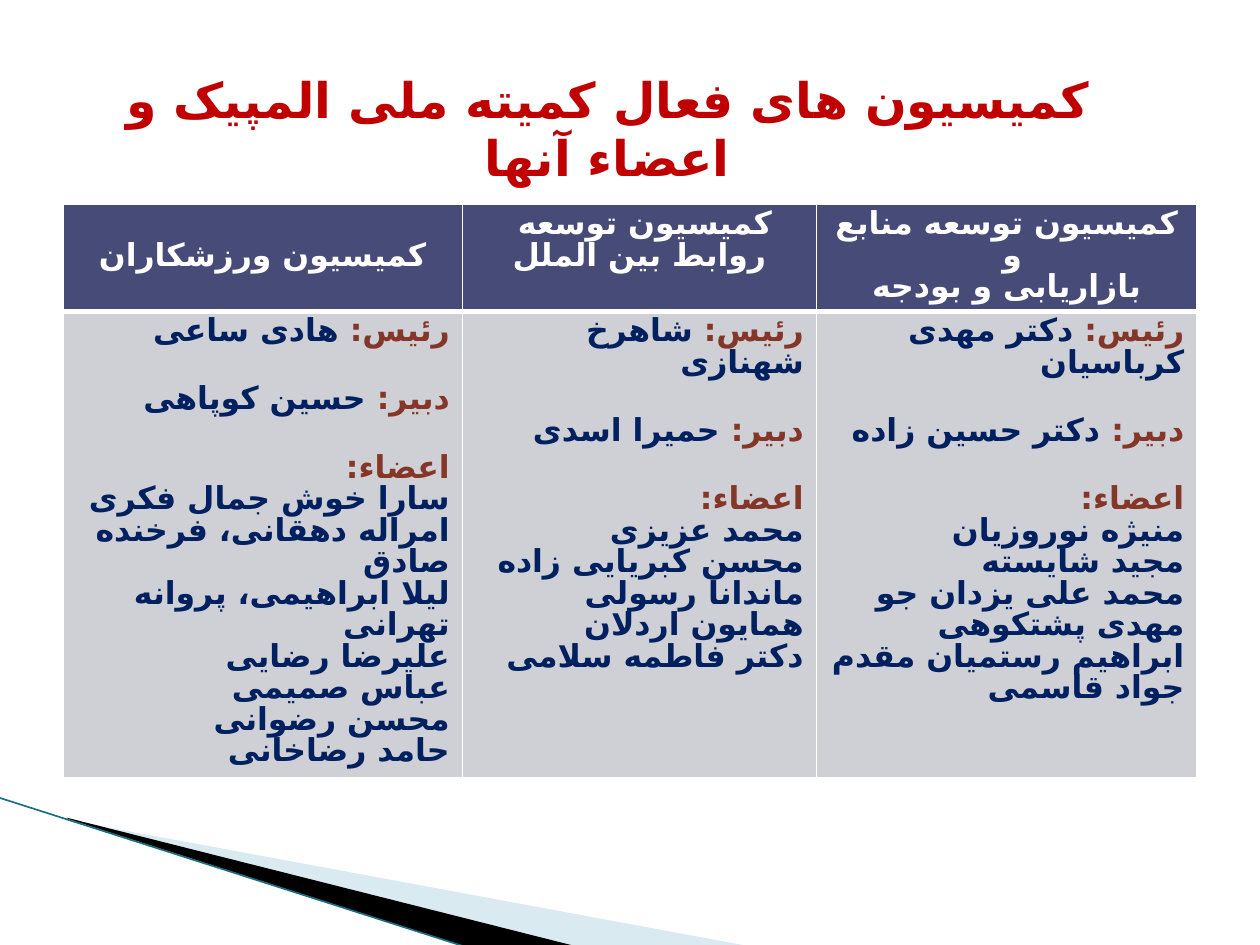
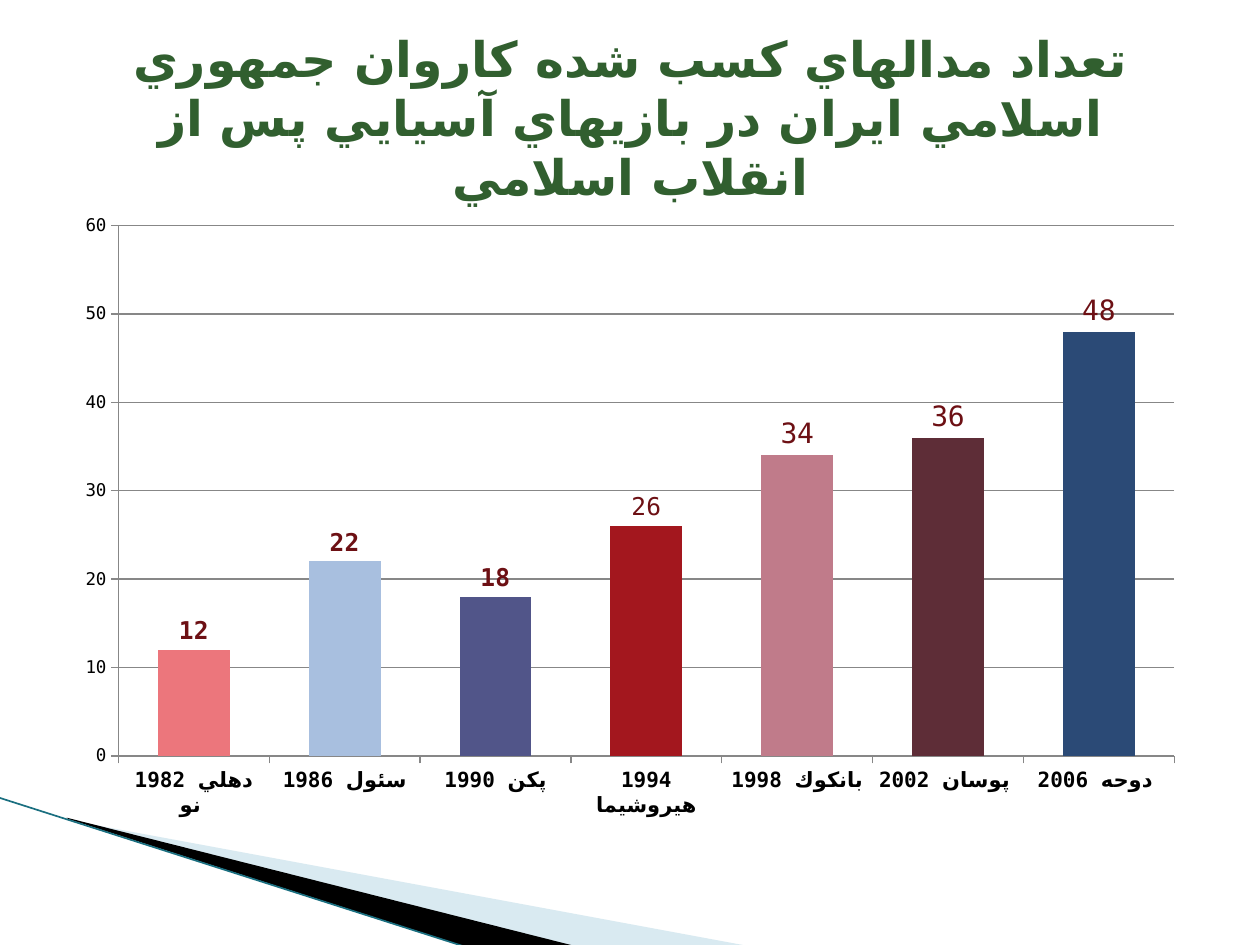
import dataclasses

import lxml.etree
import pptx
import pptx.chart.data
import pptx.dml.color
import pptx.enum.chart
import pptx.enum.shapes
import pptx.enum.text
import pptx.oxml
import pptx.oxml.ns
import pptx.util

SCALE = 9144
qn = pptx.oxml.ns.qn
ALIGN = pptx.enum.text.PP_ALIGN
ANCHOR = pptx.enum.text.MSO_ANCHOR


@dataclasses.dataclass(frozen=True)
class Theme:
    font: str = "DejaVu Sans Mono"
    persian_font: str = "DejaVu Sans"
    white: str = "FFFFFF"
    black: str = "000000"
    red_title: str = "C00000"
    green_title: str = "315F2F"
    header_fill: str = "474B78"
    body_fill: str = "CFD0D6"
    role: str = "843728"
    member: str = "002060"
    wedge: str = "A0CBDC"
    edge: str = "1A6F80"
    grid: str = "878787"
    value_label: str = "6D1014"
    title_size: int = 28
    table_size: int = 18
    category_size: int = 12
    axis_size: int = 10
    section_gap: int = 21
    bars: tuple = ("EC767C", "A8BFDF", "515589", "A3171E", "C07B8A", "5E2D37", "2B4A76")


def px(length):
    return pptx.util.Emu(length * SCALE)


def rgb(color):
    return pptx.dml.color.RGBColor.from_string(color)


def child(parent, tag, **attributes):
    element = lxml.etree.SubElement(parent, qn(tag))
    for name, value in attributes.items():
        element.set(name, str(value))
    return element


def style_font(font, theme, size, color, bold=False):
    font.name = theme.font
    font.size = pptx.util.Pt(size)
    font.bold = bold
    font.color.rgb = rgb(color)
    child(font._rPr, "a:cs", typeface=theme.persian_font)


def write(para, text, align=None, spacing=None, before=None, **style):
    if align is not None:
        para.alignment = align
        para._p.get_or_add_pPr().set("rtl", "1")
    if spacing:
        para.line_spacing = pptx.util.Pt(spacing)
    if before:
        para.space_before = pptx.util.Pt(before)
    span = para.add_run()
    span.text = text
    style_font(span.font, **style)


class Page:
    def __init__(self, deck, theme):
        self.deck = deck
        self.theme = theme
        self.slide = None

    def start(self):
        self.slide = self.deck.slides.add_slide(self.deck.slide_layouts[6])
        self.polygon([(55, 651), (595, 751), (456, 751), (55, 650)], self.theme.wedge, alpha=40)
        self.polygon([(53, 649), (457, 751), (372, 752), (54, 650)], self.theme.black)
        self.line((-1, 633), (371, 752), self.theme.edge, 0.95)

    def polygon(self, points, color, alpha=None):
        builder = self.slide.shapes.build_freeform(*points[0], scale=SCALE)
        builder.add_line_segments(points[1:], close=True)
        shape = builder.convert_to_shape()
        shape.shadow.inherit = False
        shape.line.fill.background()
        shape.fill.solid()
        shape.fill.fore_color.rgb = rgb(color)
        if alpha:
            swatch = shape._element.spPr.find(".//" + qn("a:srgbClr"))
            child(swatch, "a:alpha", val=alpha * 1000)

    def line(self, start, end, color, width):
        connector = self.slide.shapes.add_connector(
            pptx.enum.shapes.MSO_CONNECTOR.STRAIGHT, *map(px, start + end))
        connector.line.color.rgb = rgb(color)
        connector.line.width = pptx.util.Pt(width)
        child(connector._element.spPr, "a:effectLst")

    def title(self, text, area, color):
        box = self.slide.shapes.add_textbox(*map(px, area))
        frame = box.text_frame
        frame.word_wrap = True
        frame.vertical_anchor = ANCHOR.MIDDLE
        write(frame.paragraphs[0], text, align=ALIGN.CENTER, theme=self.theme,
              size=self.theme.title_size, color=color, bold=True)

    def paint_cell(self, cell, color, top, bottom):
        properties = cell._tc.get_or_add_tcPr()
        for side, width in (("L", 1), ("R", 1), ("T", top), ("B", bottom)):
            border = child(properties, "a:ln" + side, w=pptx.util.Pt(width))
            child(child(border, "a:solidFill"), "a:srgbClr", val=self.theme.white)
        cell.fill.solid()
        cell.fill.fore_color.rgb = rgb(color)

    def fill_cell(self, cell, lines, align):
        for index, (spans, before) in enumerate(lines):
            para = cell.text_frame.paragraphs[0] if index == 0 else cell.text_frame.add_paragraph()
            for text, color in spans:
                write(para, text, align=align, spacing=self.theme.table_size, before=before,
                      theme=self.theme, size=self.theme.table_size, color=color, bold=True)

    def commission_table(self, commissions, area, widths, heights):
        theme = self.theme
        table = self.slide.shapes.add_table(2, len(commissions), *map(px, area)).table
        for row, height in zip(table.rows, heights):
            row.height = px(height)
        for index, (heading, chair, secretary, members) in enumerate(commissions):
            table.columns[index].width = px(widths[index])
            header, body = table.cell(0, index), table.cell(1, index)
            self.paint_cell(header, theme.header_fill, 1, 3)
            self.paint_cell(body, theme.body_fill, 3, 1)
            if len(heading) == 1:
                header.vertical_anchor = ANCHOR.MIDDLE
            self.fill_cell(header, [([(text, theme.white)], None) for text in heading], ALIGN.CENTER)
            lines = [
                ([("رئیس: ", theme.role), (chair, theme.member)], None),
                ([("دبیر: ", theme.role), (secretary, theme.member)], theme.section_gap),
                ([("اعضاء: ", theme.role)], theme.section_gap),
            ]
            lines += [([(member, theme.member)], None) for member in members]
            self.fill_cell(body, lines, ALIGN.RIGHT)

    def column_chart(self, medals, label_styles, area, plot_box):
        theme = self.theme
        data = pptx.chart.data.CategoryChartData()
        data.categories = [games for games, count in medals]
        data.add_series("Series 1", [count for games, count in medals])
        chart = self.slide.shapes.add_chart(
            pptx.enum.chart.XL_CHART_TYPE.COLUMN_CLUSTERED, *map(px, area), data).chart
        chart.has_legend = False
        chart.has_title = False
        style_font(chart.font, theme, theme.axis_size, theme.black)
        plot = chart.plots[0]
        plot.gap_width = 110
        plot.vary_by_categories = False
        for axis in (chart.category_axis, chart.value_axis):
            axis.major_tick_mark = pptx.enum.chart.XL_TICK_MARK.OUTSIDE
            axis.minor_tick_mark = pptx.enum.chart.XL_TICK_MARK.NONE
            axis.format.line.color.rgb = rgb(theme.grid)
        style_font(chart.category_axis.tick_labels.font, theme,
                   theme.category_size, theme.black, True)
        values = chart.value_axis
        values.minimum_scale, values.maximum_scale, values.major_unit = 0, 60, 10
        values.has_major_gridlines = True
        values.major_gridlines.format.line.color.rgb = rgb(theme.grid)
        for index, (color, (size, bold)) in enumerate(zip(theme.bars, label_styles)):
            point = plot.series[0].points[index]
            point.format.fill.solid()
            point.format.fill.fore_color.rgb = rgb(color)
            style_font(point.data_label.font, theme, size, theme.value_label, bold)
            point.data_label.position = pptx.enum.chart.XL_LABEL_POSITION.OUTSIDE_END
        self.place_plot(chart, area, plot_box)

    def place_plot(self, chart, area, plot_box):
        plot_area = chart._chartSpace.chart.plotArea
        for old in plot_area.findall(qn("c:layout")):
            plot_area.remove(old)
        layout = child(plot_area, "c:layout")
        plot_area.insert(0, layout)
        manual = child(layout, "c:manualLayout")
        child(manual, "c:layoutTarget", val="inner")
        child(manual, "c:xMode", val="edge")
        child(manual, "c:yMode", val="edge")
        left, top, width, height = area
        plot_left, plot_top, plot_width, plot_height = plot_box
        child(manual, "c:x", val=(plot_left - left) / width)
        child(manual, "c:y", val=(plot_top - top) / height)
        child(manual, "c:w", val=plot_width / width)
        child(manual, "c:h", val=plot_height / height)


COMMISSIONS = [
    (["کمیسیون ورزشکاران"], "هادی ساعی", "حسین کوپاهی",
     ["سارا خوش جمال فکری", "امراله دهقانی، فرخنده صادق", "لیلا ابراهیمی، پروانه تهرانی",
      "علیرضا رضایی", "عباس صمیمی", "محسن رضوانی", "حامد رضاخانی"]),
    (["کمیسیون توسعه ", "روابط بین الملل"], "شاهرخ شهنازی", "حمیرا اسدی",
     ["محمد عزیزی", "محسن کبریایی زاده", "ماندانا رسولی", "همایون اردلان",
      "دکتر فاطمه سلامی"]),
    (["کمیسیون توسعه منابع و ", "بازاریابی و بودجه"], "دکتر مهدی کرباسیان", "دکتر حسین زاده",
     ["منیژه نوروزیان", "مجید شایسته", "محمد علی یزدان جو", "مهدی پشتکوهی",
      "ابراهیم رستمیان مقدم", "جواد قاسمی"]),
]

MEDALS = [
    ("1982 دهلي نو ", 12), ("1986 سئول", 22), ("1990 پكن", 18), ("1994 هيروشيما", 26),
    ("1998 بانكوك", 34), ("2002 پوسان ", 36), ("2006 دوحه ", 48),
]
LABEL_STYLES = [(14, True)] * 3 + [(14, False)] + [(16, False)] * 3


def main():
    deck = pptx.Presentation()
    deck.slide_width, deck.slide_height = px(1000), px(750)
    theme = Theme()
    page = Page(deck, theme)

    page.start()
    page.title("کمیسیون های فعال کمیته ملی المپیک و اعضاء آنها", (50, 70, 864, 63), theme.red_title)
    page.commission_table(COMMISSIONS, (50, 162, 900, 450), (317, 281, 302), (80, 370))

    page.start()
    page.title("تعداد مدالهاي كسب شده كاروان جمهوري اسلامي ايران در بازيهاي آسيايي پس از انقلاب اسلامي",
               (50, 30, 900, 125), theme.green_title)
    page.column_chart(MEDALS, LABEL_STYLES, (50, 162, 900, 495), (94, 179, 838, 421))

    deck.save("out.pptx")


if __name__ == "__main__":
    main()
